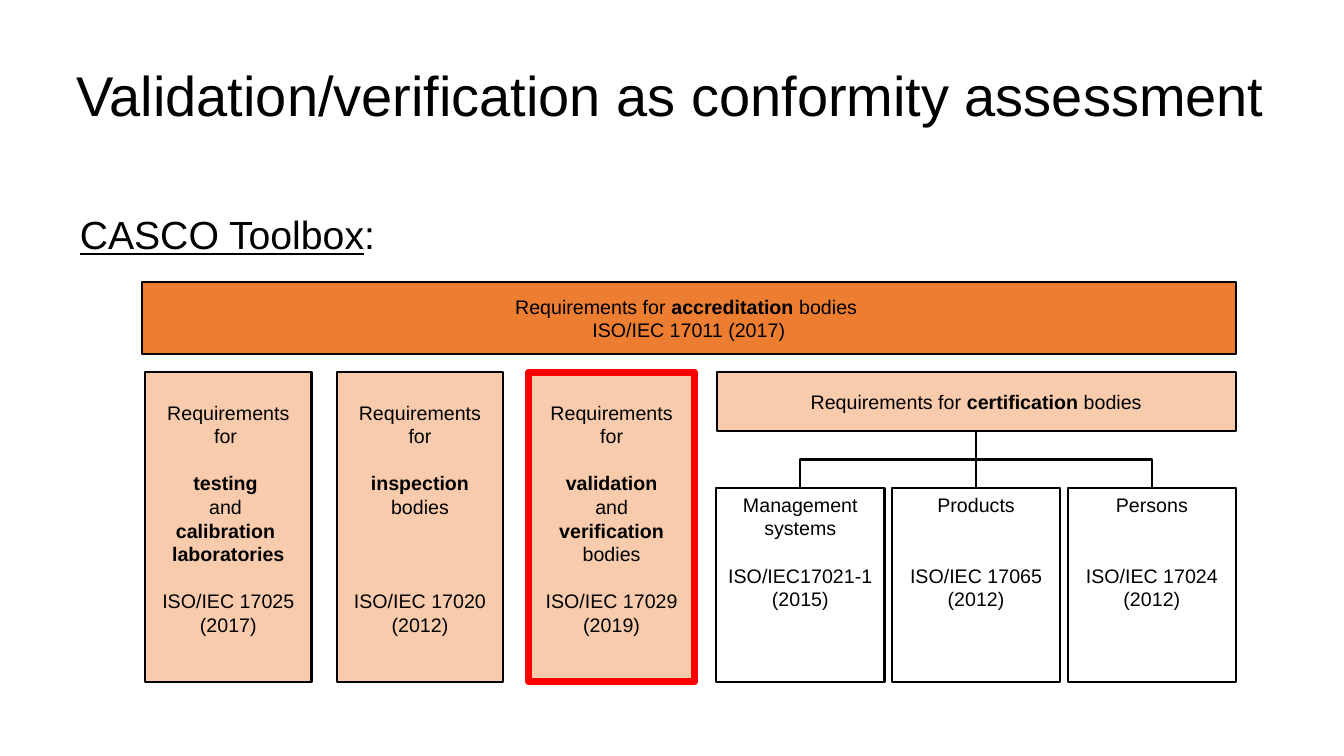
from pptx import Presentation
from pptx.dml.color import RGBColor
from pptx.enum.shapes import MSO_CONNECTOR, MSO_SHAPE
from pptx.enum.text import MSO_ANCHOR, MSO_AUTO_SIZE, PP_ALIGN
from pptx.oxml.ns import qn
from pptx.util import Cm, Pt
from lxml import etree

BLACK, RED, ORANGE, PEACH = "000000", "FF0000", "ED7D31", "F8CBAD"
LINE_HEIGHT = 16.8  # points, one line of 14 pt text


def color(hex_value):
    return RGBColor.from_string(hex_value)


def add_box(left, top, width, height, lines, fill=None, anchor=MSO_ANCHOR.TOP,
            outline=BLACK, weight=1.5, inset=0.13):
    """Add a box; lines are (blank lines above, text with *bold* spans)."""
    box = page.shapes.add_shape(MSO_SHAPE.FLOWCHART_PROCESS,
                                Cm(left), Cm(top), Cm(width), Cm(height))
    box.shadow.inherit = False
    if fill:
        box.fill.solid()
        box.fill.fore_color.rgb = color(fill)
    else:
        box.fill.background()
    box.line.color.rgb = color(outline)
    box.line.width = Pt(weight)
    frame = box.text_frame
    frame.word_wrap = True
    frame.vertical_anchor = anchor
    frame.margin_top = Cm(inset)
    for number, (gap, text) in enumerate(lines):
        para = frame.add_paragraph() if number else frame.paragraphs[0]
        para.alignment = PP_ALIGN.CENTER
        para.space_before = Pt(gap * LINE_HEIGHT)
        para.font.size = Pt(14)
        para.font.name = "Arial"
        para.font.color.rgb = color(BLACK)
        for position, part in enumerate(text.split("*")):
            if part:
                span = para.add_run()
                span.text = part
                span.font.bold = position % 2 == 1
    return box


deck = Presentation()
deck.slide_width, deck.slide_height = Cm(33.87), Cm(19.05)
page = deck.slides.add_slide(deck.slide_layouts[1])

# Title and subtitle
heading, subtitle = page.shapes.title, page.placeholders[1]
for holder, left, top, width, height, size, spans, anchor in (
    (heading, 1.93, 1.57, 30, 1.8, 40,
     [("Validation/verification as conformity assessment", False)], MSO_ANCHOR.MIDDLE),
    (subtitle, 2.01, 5.31, 30.02, 2.77, 28,
     [("CASCO Toolbox", True), (":", False)], MSO_ANCHOR.TOP),
):
    holder.left, holder.top = Cm(left), Cm(top)
    holder.width, holder.height = Cm(width), Cm(height)
    frame = holder.text_frame
    frame.auto_size = MSO_AUTO_SIZE.NONE
    frame.word_wrap = True
    frame.vertical_anchor = anchor
    frame.margin_left = frame.margin_right = 0
    para = frame.paragraphs[0]
    properties = para._p.get_or_add_pPr()
    properties.set("marL", "0")
    properties.set("indent", "0")
    etree.SubElement(properties, qn("a:buNone"))
    para.alignment = PP_ALIGN.LEFT
    para.line_spacing = 0.9
    para.space_before = Pt(0)
    para.font.size = Pt(size)
    para.font.name = "Arial"
    para.font.color.rgb = color(BLACK)
    for text, underlined in spans:
        span = para.add_run()
        span.text = text
        span.font.underline = underlined

# Accreditation bar
add_box(3.58, 7.11, 27.56, 1.8,
        [(0, "Requirements for *accreditation* bodies "), (0, "ISO/IEC 17011 (2017)")],
        ORANGE, MSO_ANCHOR.MIDDLE)

# Three columns of requirements
columns = [
    ([(0, "Requirements for "), (1, "*testing *"), (0, "and "), (0, "*calibration *"),
      (0, "*laboratories*"), (1, "ISO/IEC 17025"), (0, "(2017)")], BLACK, 1.5),
    ([(0, "Requirements for"), (1, "*inspection* bodies"),
      (3, "ISO/IEC 17020"), (0, "(2012)")], BLACK, 1.5),
    ([(0, "Requirements for"), (1, "*validation*"), (0, "and"),
      (0, "*verification *bodies"), (1, "ISO/IEC 17029"), (0, "(2019)")], RED, 5),
]
for number, (lines, outline, weight) in enumerate(columns):
    add_box(3.66 + number * 4.83, 9.38, 4.19, 7.8, lines, PEACH,
            outline=outline, weight=weight, inset=0.72)

# Certification bar and its three cards
certification = add_box(18.06, 9.37, 13.08, 1.5,
                        [(0, "Requirements for *certification* bodies")],
                        PEACH, MSO_ANCHOR.MIDDLE)
cards = [
    [(0, "Management systems"), (1, "ISO/IEC17021-1"), (0, "(2015)")],
    [(0, "Products"), (2, "ISO/IEC 17065 (2012)")],
    [(0, "Persons"), (2, "ISO/IEC 17024 (2012)")],
]
for number, lines in enumerate(cards):
    card = add_box(18.05 + number * 4.43, 12.29, 4.24, 4.9, lines)
    kind = MSO_CONNECTOR.STRAIGHT if number == 1 else MSO_CONNECTOR.ELBOW
    link = page.shapes.add_connector(kind, 0, 0, 0, 0)
    link.begin_connect(certification, 2)
    link.end_connect(card, 0)
    link.line.color.rgb = color(BLACK)
    link.line.width = Pt(1.5)
    etree.SubElement(link._element.spPr, qn("a:effectLst"))
    if number != 1:
        # Turn the elbow so that it leaves downwards
        across, down = link.width, link.height
        link.left += (across - down) // 2
        link.top += (down - across) // 2
        link.width, link.height = down, across
        frame = link._element.spPr.find(qn("a:xfrm"))
        frame.set("rot", "5400000" if number == 0 else "16200000")
        frame.set("flipH", "0" if number == 0 else "1")

deck.save("out.pptx")
